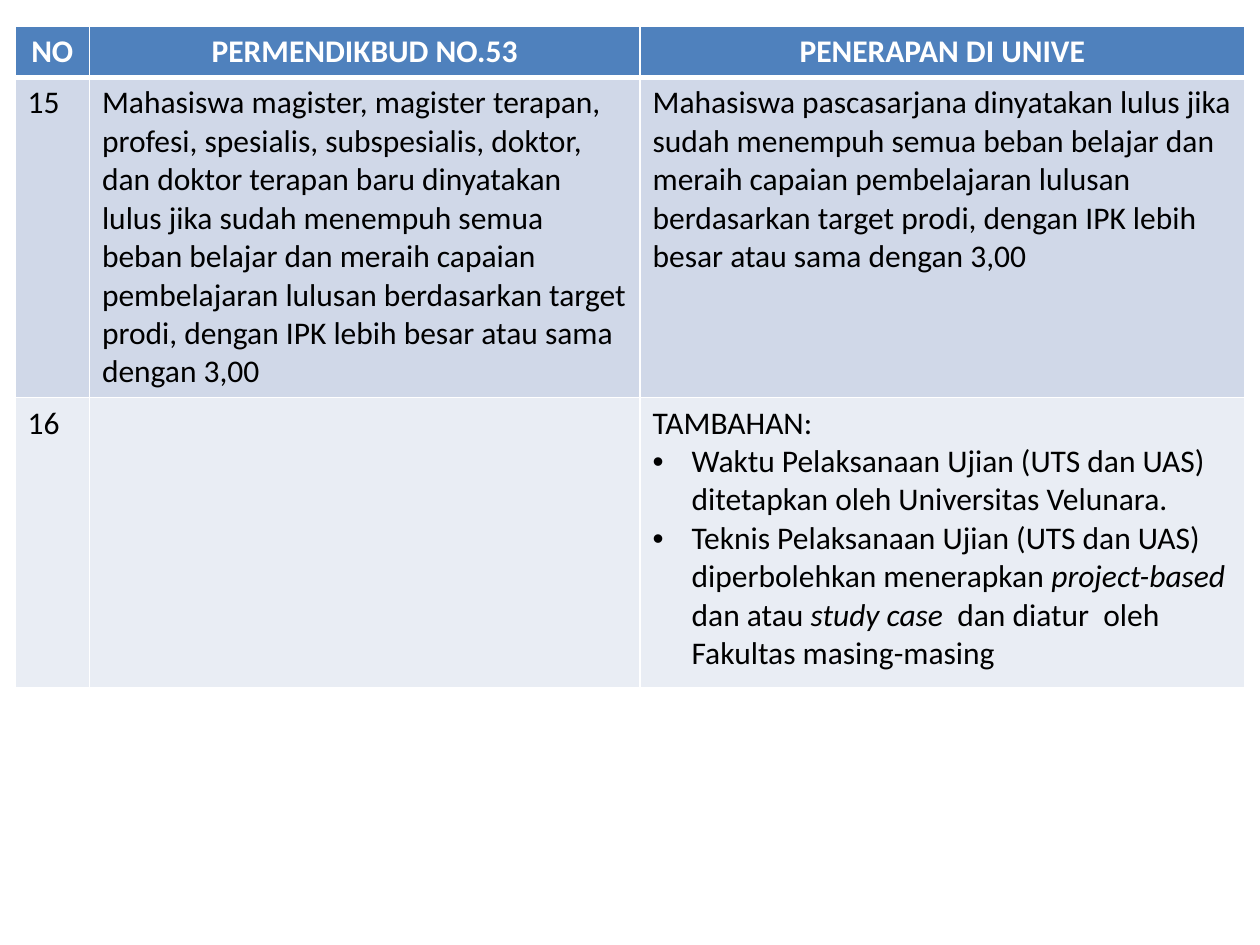
from dataclasses import dataclass

from lxml.etree import SubElement
from pptx import Presentation
from pptx.dml.color import RGBColor
from pptx.enum.text import PP_ALIGN as Align
from pptx.oxml.ns import qn
from pptx.util import Inches, Pt

WHITE = RGBColor(0xFF, 0xFF, 0xFF)
BLACK = RGBColor(0x00, 0x00, 0x00)
HEADER_BLUE = RGBColor(0x4F, 0x81, 0xBD)
BAND_DARK = RGBColor(0xD0, 0xD8, 0xE8)
BAND_LIGHT = RGBColor(0xE9, 0xED, 0xF4)

FONT = "Calibri"
BULLET_INDENT = Inches(0.31)
COLUMN_WIDTHS = (0.59, 4.37, 4.8)


@dataclass(frozen=True)
class Span:
    text: str
    italic: bool = False


@dataclass(frozen=True)
class Line:
    spans: tuple[Span, ...]
    bullet: bool = False


@dataclass(frozen=True)
class Row:
    height: float
    fill: RGBColor
    cells: tuple[tuple[Line, ...], ...]
    header: bool = False
    top_border: float = 1
    bottom_border: float = 1


def plain(text: str, bullet: bool = False) -> Line:
    return Line((Span(text),), bullet)


GRADUATION = (
    "sudah menempuh semua beban belajar dan meraih capaian pembelajaran lulusan "
    "berdasarkan target prodi, dengan IPK lebih besar atau sama dengan 3,00"
)

ROWS = (
    Row(0.39, HEADER_BLUE, (
        (plain("NO"),),
        (plain("PERMENDIKBUD NO.53"),),
        (plain("PENERAPAN DI UNIVE"),),
    ), header=True, bottom_border=3),
    Row(2.36, BAND_DARK, (
        (plain("15"),),
        (plain("Mahasiswa magister, magister terapan, profesi, spesialis, subspesialis, "
               "doktor, dan doktor terapan baru dinyatakan lulus jika " + GRADUATION),),
        (plain("Mahasiswa pascasarjana dinyatakan lulus jika " + GRADUATION),),
    ), top_border=3),
    Row(2.3, BAND_LIGHT, (
        (plain("16"),),
        (),
        (
            plain("TAMBAHAN:"),
            plain("Waktu Pelaksanaan Ujian (UTS dan UAS) ditetapkan oleh "
                  "Universitas Velunara.", bullet=True),
            Line((
                Span("Teknis Pelaksanaan Ujian (UTS dan UAS) diperbolehkan menerapkan "),
                Span("project-based ", italic=True),
                Span("dan atau "),
                Span("study case  ", italic=True),
                Span("dan diatur  oleh Fakultas masing-masing"),
            ), bullet=True),
        ),
    )),
)


def add_span(para, text: str, *, color: RGBColor = BLACK, size: float = 18,
             bold: bool = False, italic: bool = False) -> None:
    run = para.add_run()
    run.text = text
    font = run.font
    font.name, font.size, font.bold, font.italic = FONT, Pt(size), bold, italic
    font.color.rgb = color


def add_bullet(para) -> None:
    properties = para._p.get_or_add_pPr()
    properties.set("marL", str(BULLET_INDENT))
    properties.set("indent", str(-BULLET_INDENT))
    SubElement(properties, qn("a:buFont"), typeface="Arial")
    SubElement(properties, qn("a:buChar"), char="•")


def set_borders(cell, top: float, bottom: float) -> None:
    properties = cell._tc.get_or_add_tcPr()
    for side, width in (("L", 1), ("R", 1), ("T", top), ("B", bottom)):
        border = SubElement(properties, qn(f"a:ln{side}"), w=str(Pt(width)))
        fill = SubElement(border, qn("a:solidFill"))
        SubElement(fill, qn("a:srgbClr"), val=str(WHITE))


def fill_cell(cell, lines: tuple[Line, ...], row: Row) -> None:
    set_borders(cell, row.top_border, row.bottom_border)
    cell.fill.solid()
    cell.fill.fore_color.rgb = row.fill
    frame = cell.text_frame
    for index, line in enumerate(lines):
        para = frame.add_paragraph() if index else frame.paragraphs[0]
        para.alignment = Align.CENTER if row.header else Align.LEFT
        if line.bullet:
            add_bullet(para)
        for span in line.spans:
            add_span(para, span.text, color=WHITE if row.header else BLACK,
                     bold=row.header, italic=span.italic)


def add_rules_table(page) -> None:
    table = page.shapes.add_table(
        len(ROWS), len(COLUMN_WIDTHS), Inches(0.12), Inches(0.21),
        Inches(sum(COLUMN_WIDTHS)), Inches(sum(row.height for row in ROWS)),
    ).table
    for column, width in zip(table.columns, COLUMN_WIDTHS):
        column.width = Inches(width)
    for table_row, row in zip(table.rows, ROWS):
        table_row.height = Inches(row.height)
        for cell, lines in zip(table_row.cells, row.cells):
            fill_cell(cell, lines, row)


def main() -> None:
    deck = Presentation()
    deck.slide_width, deck.slide_height = Inches(10), Inches(7.5)
    page = deck.slides.add_slide(deck.slide_layouts[6])
    add_rules_table(page)
    deck.save("out.pptx")


if __name__ == "__main__":
    main()
